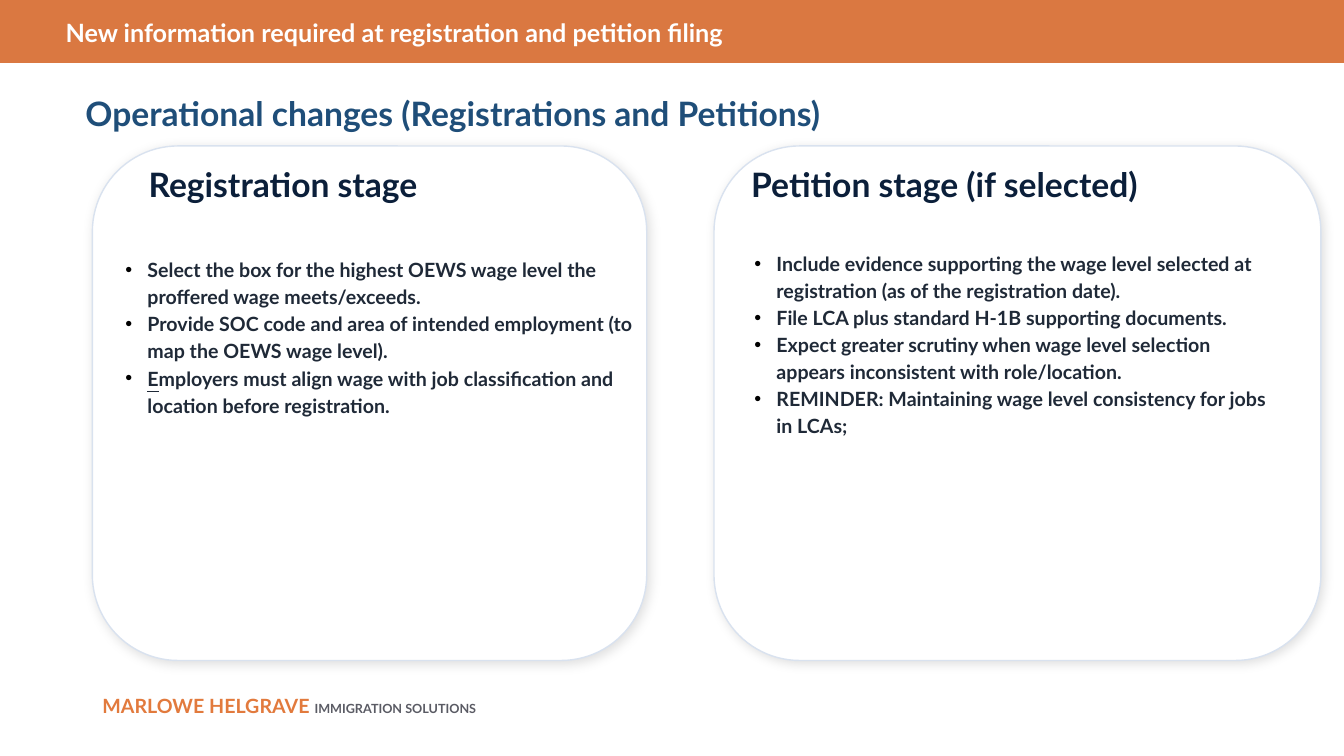
from lxml.etree import SubElement
from pptx import Presentation
from pptx.dml.color import RGBColor
from pptx.enum.shapes import MSO_SHAPE as Shape
from pptx.enum.text import MSO_ANCHOR as Anchor
from pptx.oxml.ns import qn
from pptx.util import Emu, Pt

PX = 9525
WHITE = RGBColor(0xFF, 0xFF, 0xFF)
BANNER = RGBColor(0xDA, 0x78, 0x41)
ORANGE = RGBColor(0xE2, 0x7A, 0x3D)
GRAY = RGBColor(0x5A, 0x5B, 0x64)
BLUE = RGBColor(0x1F, 0x4E, 0x79)
NAVY = RGBColor(0x0B, 0x1F, 0x3A)
INK = RGBColor(0x1F, 0x29, 0x37)
BORDER = RGBColor(0xD9, 0xE2, 0xEF)


class SlideBuilder:
    font_name = "Lato"

    def __init__(self, slide):
        self.slide = slide

    def shape(self, kind, box, fill, line=None):
        shape = self.slide.shapes.add_shape(kind, *[Emu(n * PX) for n in box])
        shape.shadow.inherit = False
        shape.fill.solid()
        shape.fill.fore_color.rgb = fill
        if line is None:
            shape.line.fill.background()
        else:
            shape.line.color.rgb = line
            shape.line.width = Pt(1)
        return shape

    def card(self, box):
        shape = self.shape(Shape.ROUNDED_RECTANGLE, box, WHITE, BORDER)
        effects = shape._element.spPr.find(qn("a:effectLst"))
        shadow = SubElement(effects, qn("a:outerShdw"), blurRad=str(Pt(8)),
                            dist=str(Pt(2)), dir="2700000", algn="bl", rotWithShape="0")
        color = SubElement(shadow, qn("a:srgbClr"), val="000000")
        SubElement(color, qn("a:alpha"), val="12000")

    def text_frame(self, box, anchor):
        frame = self.slide.shapes.add_textbox(*[Emu(n * PX) for n in box]).text_frame
        frame.word_wrap = True
        frame.vertical_anchor = anchor
        return frame

    def run(self, paragraph, text, size, color, **extra):
        run = paragraph.add_run()
        run.text = text
        run.font.color.rgb = color
        style = {"name": self.font_name, "size": Pt(size), "bold": True, **extra}
        for name, value in style.items():
            setattr(run.font, name, value)

    def label(self, box, *runs, anchor=Anchor.MIDDLE):
        paragraph = self.text_frame(box, anchor).paragraphs[0]
        for text, size, color, *weight in runs:
            self.run(paragraph, text, size, color, bold=not weight)

    def bullets(self, box, items):
        frame = self.text_frame(box, Anchor.TOP)
        for index, item in enumerate(items):
            paragraph = frame.paragraphs[0] if index == 0 else frame.add_paragraph()
            paragraph.line_spacing = 1.15
            properties = paragraph._p.get_or_add_pPr()
            properties.set("marL", str(21 * PX))
            properties.set("indent", str(-21 * PX))
            color = SubElement(properties, qn("a:buClr"))
            SubElement(color, qn("a:srgbClr"), val="000000")
            SubElement(properties, qn("a:buFont"), typeface="Arial")
            SubElement(properties, qn("a:buChar"), char="•")
            underlined, plain = item if isinstance(item, tuple) else ("", item)
            if underlined:
                self.run(paragraph, underlined, 14, INK, underline=True)
            self.run(paragraph, plain, 14, INK)


STAGES = [
    {
        "card": (88, 139, 528, 490),
        "heading": ("Registration stage", (132, 158, 547, 34)),
        "box": (110, 238, 506, 424),
        "items": [
            "Select the box for the highest OEWS wage level the proffered wage meets/exceeds.",
            "Provide SOC code and area of intended employment (to map the OEWS wage level).",
            ("E", "mployers must align wage with job classification and location "
                  "before registration."),
        ],
    },
    {
        "card": (680, 139, 578, 490),
        "heading": ("Petition stage (if selected)", (706, 158, 566, 34)),
        "box": (709, 232, 518, 461),
        "items": [
            "Include evidence supporting the wage level selected at registration "
            "(as of the registration date).",
            "File LCA plus standard H‑1B supporting documents.",
            "Expect greater scrutiny when wage level selection appears inconsistent "
            "with role/location.",
            "REMINDER: Maintaining wage level consistency for jobs in LCAs;",
        ],
    },
]


def main():
    presentation = Presentation()
    presentation.slide_width = Emu(1280 * PX)
    presentation.slide_height = Emu(720 * PX)
    builder = SlideBuilder(presentation.slides.add_slide(presentation.slide_layouts[6]))

    builder.label((88, 656, 634, 61), ("MARLOWE HELGRAVE ", 14, ORANGE),
                  ("IMMIGRATION SOLUTIONS", 9, GRAY), anchor=Anchor.TOP)
    builder.shape(Shape.RECTANGLE, (0, 0, 1280, 60), BANNER)
    builder.label((53, 13, 1171, 35),
                  ("New information required at registration and petition filing", 18, WHITE))
    builder.label((72, 91, 1152, 34),
                  ("Operational changes (Registrations and Petitions)", 24, BLUE))
    for stage in STAGES:
        builder.card(stage["card"])
    for stage in STAGES:
        heading, heading_box = stage["heading"]
        builder.label(heading_box, (heading, 24, NAVY))
        builder.bullets(stage["box"], stage["items"])
    presentation.save("out.pptx")


if __name__ == "__main__":
    main()
